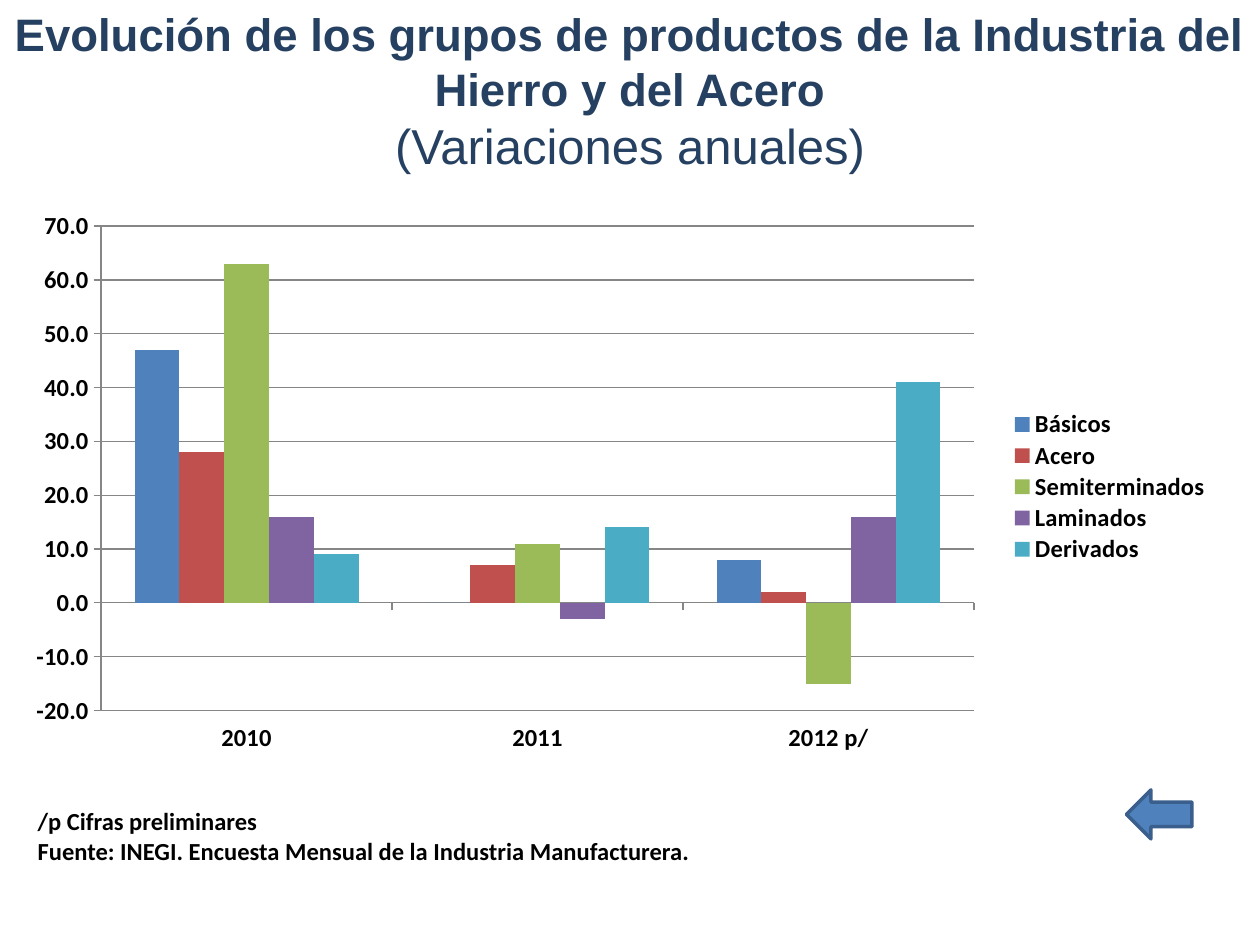
"""Build the slide on yearly changes in iron and steel product groups."""
from dataclasses import dataclass

from lxml.etree import SubElement
from pptx import Presentation
from pptx.chart.data import CategoryChartData
from pptx.dml.color import RGBColor
from pptx.enum.chart import XL_CHART_TYPE, XL_LEGEND_POSITION, XL_TICK_LABEL_POSITION, XL_TICK_MARK
from pptx.enum.shapes import MSO_SHAPE
from pptx.enum.text import MSO_ANCHOR, MSO_AUTO_SIZE, PP_ALIGN
from pptx.oxml import parse_xml
from pptx.oxml.ns import nsdecls, qn
from pptx.util import Pt


@dataclass(frozen=True)
class Theme:
    title_font: str = "Arial"
    body_font: str = "Calibri"
    title_size: int = 26
    subtitle_size: int = 28
    body_size: int = 14
    title: str = "254061"
    text: str = "000000"
    grid: str = "868686"
    arrow: str = "4F81BD"
    arrow_line: str = "3A5F8C"


@dataclass(frozen=True)
class Box:
    x: float
    y: float
    w: float
    h: float

    def pts(self) -> tuple:
        return Pt(self.x), Pt(self.y), Pt(self.w), Pt(self.h)


@dataclass(frozen=True)
class Group:
    name: str
    values: tuple
    color: str


THEME = Theme()
YEARS = ("2010", "2011", "2012 p/")
GROUPS = (
    Group("Básicos", (47, 0, 8), "4F81BD"),
    Group("Acero", (28, 7, 2), "C0504D"),
    Group("Semiterminados", (63, 11, -15), "9BBB59"),
    Group("Laminados", (16, -3, 16), "8064A2"),
    Group("Derivados", (9, 14, 41), "4BACC6"),
)


def rgb(value: str) -> RGBColor:
    return RGBColor.from_string(value)


def style(font, name: str, size: float, color: str, bold: bool) -> None:
    font.name, font.size, font.bold = name, Pt(size), bold
    font.color.rgb = rgb(color)


def body_style(font) -> None:
    style(font, THEME.body_font, THEME.body_size, THEME.text, True)


def grid_line(line) -> None:
    line.color.rgb = rgb(THEME.grid)
    line.width = Pt(0.75)


def add_title(s, box: Box) -> None:
    sp = s.shapes.title
    sp.left, sp.top, sp.width, sp.height = box.pts()
    tf = sp.text_frame
    tf.text = ("Evolución de los grupos de productos de la Industria del Hierro y del Acero\n"
               "(Variaciones anuales)")
    tf.word_wrap, tf.auto_size, tf.vertical_anchor = True, MSO_AUTO_SIZE.NONE, MSO_ANCHOR.TOP
    sizes = (THEME.title_size, THEME.subtitle_size)
    for p, size, bold in zip(tf.paragraphs, sizes, (True, False)):
        p.alignment = PP_ALIGN.CENTER
        style(p.runs[0].font, THEME.title_font, size, THEME.title, bold)


def set_layout(chart, part: str, index: int, box: Box, **extra: str) -> None:
    parent = chart._chartSpace.find(".//" + qn(f"c:{part}"))
    for old in parent.findall(qn("c:layout")):
        parent.remove(old)
    layout = parse_xml(f"<c:layout {nsdecls('c')}><c:manualLayout/></c:layout>")
    values = {**extra, "xMode": "edge", "yMode": "edge",
              "x": box.x, "y": box.y, "w": box.w, "h": box.h}
    for tag, value in values.items():
        SubElement(layout[0], qn(f"c:{tag}")).set("val", str(value))
    parent.insert(index, layout)


def add_groups_chart(s, box: Box) -> None:
    data = CategoryChartData(number_format="0.0")
    data.categories = YEARS
    for group in GROUPS:
        data.add_series(group.name, group.values)
    chart = s.shapes.add_chart(XL_CHART_TYPE.COLUMN_CLUSTERED, *box.pts(), data).chart
    chart.has_title = False
    body_style(chart.font)
    plot = chart.plots[0]
    plot.vary_by_categories, plot.gap_width, plot.overlap = False, 150, 0
    for series, group in zip(plot.series, GROUPS):
        series.invert_if_negative = False
        series.format.fill.solid()
        series.format.fill.fore_color.rgb = rgb(group.color)
    for axis in (chart.category_axis, chart.value_axis):
        axis.major_tick_mark = XL_TICK_MARK.OUTSIDE
        axis.minor_tick_mark = XL_TICK_MARK.NONE
        grid_line(axis.format.line)
        body_style(axis.tick_labels.font)
    chart.category_axis.tick_label_position = XL_TICK_LABEL_POSITION.LOW
    axis = chart.value_axis
    axis.minimum_scale, axis.maximum_scale, axis.major_unit = -20, 70, 10
    axis.tick_labels.number_format = "0.0"
    axis.tick_labels.number_format_is_linked = False
    grid_line(axis.major_gridlines.format.line)
    chart.has_legend = True
    chart.legend.position = XL_LEGEND_POSITION.RIGHT
    chart.legend.include_in_layout = False
    body_style(chart.legend.font)
    set_layout(chart, "plotArea", 0, Box(0.06, 0.035, 0.727, 0.864), layoutTarget="inner")
    set_layout(chart, "legend", 1, Box(0.81, 0.36, 0.18, 0.28))


def add_source(s, box: Box) -> None:
    tf = s.shapes.add_textbox(*box.pts()).text_frame
    tf.word_wrap = False
    tf.text = ("/p Cifras preliminares\n"
               "Fuente: INEGI. Encuesta Mensual de la Industria Manufacturera.")
    for p in tf.paragraphs:
        body_style(p.runs[0].font)


def add_back_arrow(s, box: Box) -> None:
    sp = s.shapes.add_shape(MSO_SHAPE.LEFT_ARROW, *box.pts())
    sp.shadow.inherit = False
    sp.fill.solid()
    sp.fill.fore_color.rgb = rgb(THEME.arrow)
    sp.line.color.rgb = rgb(THEME.arrow_line)
    sp.line.width = Pt(2)


def main() -> None:
    prs = Presentation()
    prs.slide_width, prs.slide_height = Pt(720), Pt(540)
    s = prs.slides.add_slide(prs.slide_layouts[5])
    add_title(s, Box(0, 0, 720, 104.4))
    add_source(s, Box(14.4, 457.2, 453, 37.4))
    add_groups_chart(s, Box(16.6, 118, 686.2, 320.4))
    add_back_arrow(s, Box(643.7, 451.4, 37.4, 28))
    prs.save("out.pptx")


if __name__ == "__main__":
    main()
